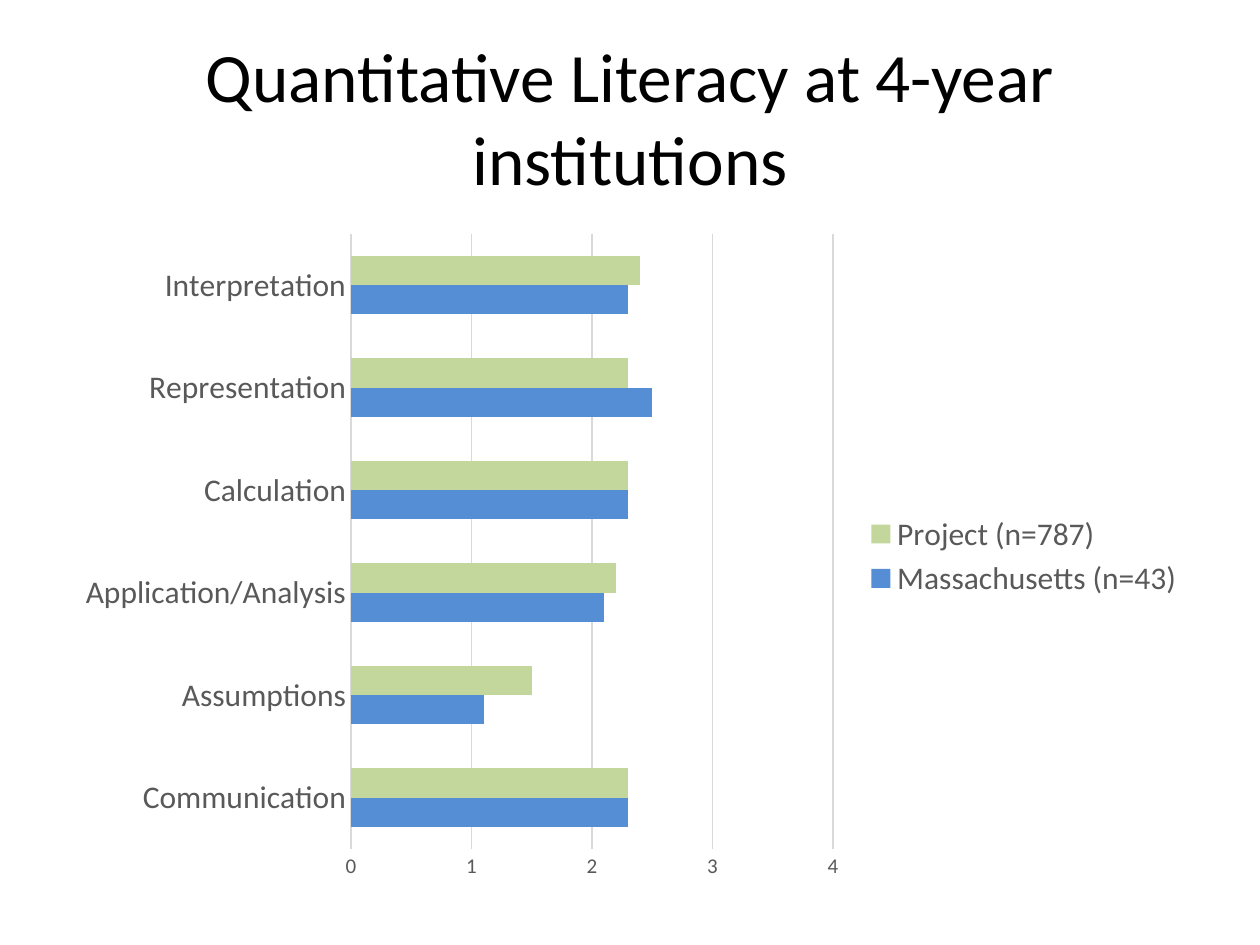
from lxml import etree
from pptx import Presentation
from pptx.chart.data import CategoryChartData
from pptx.dml.color import RGBColor
from pptx.enum import chart as ch, text as tx
from pptx.util import Inches, Pt

GREY, GRID = "595959", "D9D9D9"


def rgb(code):
    return RGBColor.from_string(code)


def style(font, size, color):
    font.name, font.size, font.bold = "Calibri", Pt(size), False
    font.color.rgb = rgb(color)


prs = Presentation()
prs.slide_width, prs.slide_height = Inches(10), Inches(7.5)
slide = prs.slides.add_slide(prs.slide_layouts[6])

# Title
box = slide.shapes.add_textbox(Inches(0.5), Inches(0.3), Inches(9), Inches(1.25))
frame = box.text_frame
frame.word_wrap = True
frame.vertical_anchor = tx.MSO_ANCHOR.MIDDLE
par = frame.paragraphs[0]
par.alignment = tx.PP_ALIGN.CENTER
run = par.add_run()
run.text = "Quantitative Literacy at 4-year institutions"
style(run.font, 39.6, "000000")

# Scores, listed from the bottom bar up
data = CategoryChartData()
data.categories = ["Communication", "Assumptions", "Application/Analysis",
                   "Calculation", "Representation", "Interpretation"]
data.add_series("Massachusetts (n=43)", [2.3, 1.1, 2.1, 2.3, 2.5, 2.3])
data.add_series("Project (n=787)", [2.3, 1.5, 2.2, 2.3, 2.3, 2.4])
chart = slide.shapes.add_chart(
    ch.XL_CHART_TYPE.BAR_CLUSTERED, Inches(0.5), Inches(1.75),
    Inches(9), Inches(5.33), data).chart
style(chart.font, 10, "000000")
chart.has_title = False

# Bars
plot = chart.plots[0]
plot.gap_width, plot.overlap = 150, 0
plot.vary_by_categories = False
for bars, color in zip(plot.series, ["558ED5", "C3D69B"]):
    bars.format.fill.solid()
    bars.format.fill.fore_color.rgb = rgb(color)

# Axes
cat, val = chart.category_axis, chart.value_axis
for axis, size in [(cat, 18), (val, 12)]:
    axis.major_tick_mark = axis.minor_tick_mark = ch.XL_TICK_MARK.NONE
    style(axis.tick_labels.font, size, GREY)
val.minimum_scale, val.maximum_scale, val.major_unit = 0, 4, 1
val.tick_labels.number_format = "0"
val.tick_labels.number_format_is_linked = False
val.format.line.fill.background()
val.has_major_gridlines = True
for line in [cat.format.line, val.major_gridlines.format.line]:
    line.color.rgb = rgb(GRID)
    line.width = Pt(0.75)

# Legend
chart.has_legend = True
chart.legend.position = ch.XL_LEGEND_POSITION.RIGHT
chart.legend.include_in_layout = False
style(chart.legend.font, 18, GREY)

# Fixed plot area, as shares of the chart
ns = "http://schemas.openxmlformats.org/drawingml/2006/chart"
area = chart._chartSpace.find(f".//{{{ns}}}plotArea")
for old in area.findall(f"{{{ns}}}layout"):
    area.remove(old)
layout = etree.Element(f"{{{ns}}}layout")
area.insert(0, layout)
manual = etree.SubElement(layout, f"{{{ns}}}manualLayout")
for tag, value in [("layoutTarget", "inner"), ("xMode", "edge"), ("yMode", "edge"),
                   ("x", "0.254"), ("y", "0.02"), ("w", "0.425"), ("h", "0.916")]:
    etree.SubElement(manual, f"{{{ns}}}{tag}").set("val", value)

prs.save("out.pptx")
